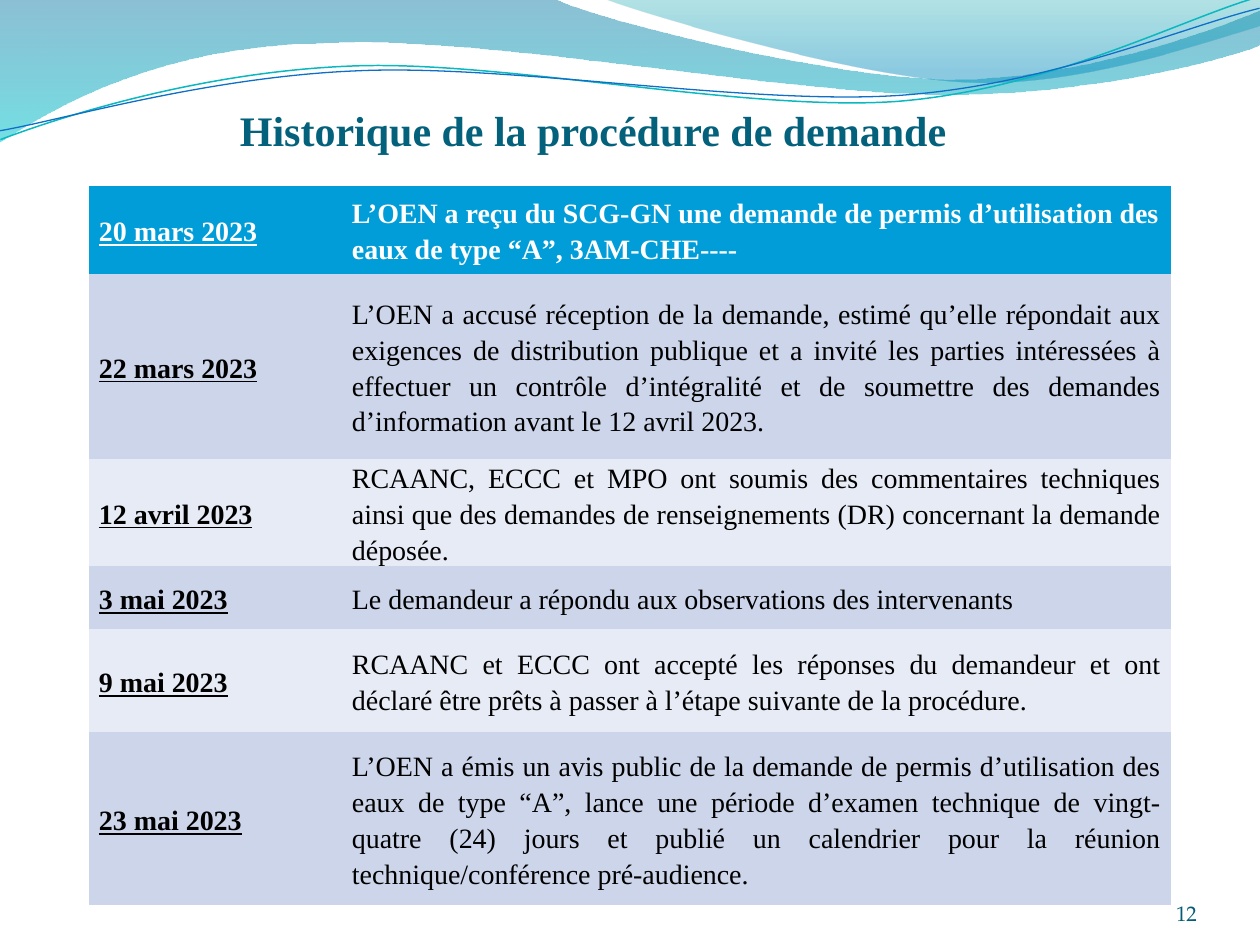
from lxml import etree
from pptx import Presentation
from pptx import util as u
from pptx.dml.color import RGBColor
from pptx.enum import text as t
from pptx.oxml.ns import qn

PX = 914400 / 126
SERIF = "Times New Roman"
PLAIN_TABLE = "{2D5ABB26-0587-4C30-8999-92F81FD0307C}"
CURVE_TILT = 357.3

BROAD_WAVE = [
    (0, 0), (554, -1), (600, 21, 837, 79, 955, 79), (1075, 79, 1207, 33, 1260, 11),
    (1261, 45), (1239, 55, 1096, 96, 940, 94), (784, 94, 481, 35, 324, 43),
    (163, 45, 58, 105, -1, 142), (0, 0),
]
CORNER_WAVE = [
    (604, -1), (641, 14, 859, 78, 969, 82), (1079, 87, 1211, 40, 1260, 26),
    (1260, 0), (604, -1),
]
TEAL_CURVE = [
    (-2, 110), (59, 90, 200, 52, 350, 53), (499, 53, 745, 118, 896, 114),
    (1049, 109, 1184, 45, 1260, 27),
]
BLUE_CURVE = [
    (-2, 101), (57, 94, 207, 57, 357, 58), (509, 58, 750, 112, 902, 108),
    (1052, 104, 1188, 52, 1262, 38),
]
COLUMN_WIDTHS = [253, 829]
HISTORY = [
    (88, "20 mars 2023",
     "L’OEN a reçu du SCG-GN une demande de permis d’utilisation des eaux "
     "de type “A”, 3AM-CHE----"),
    (185, "22 mars 2023",
     "L’OEN a accusé réception de la demande, estimé qu’elle répondait aux exigences "
     "de distribution publique et a invité les parties intéressées à effectuer un "
     "contrôle d’intégralité et de soumettre des demandes d’information avant le "
     "12 avril 2023."),
    (103, "12 avril 2023",
     "RCAANC, ECCC et MPO ont soumis des commentaires techniques ainsi que des "
     "demandes de renseignements (DR) concernant la demande déposée."),
    (63, "3 mai 2023", "Le demandeur a répondu aux observations des intervenants"),
    (103, "9 mai 2023",
     "RCAANC et ECCC ont accepté les réponses du demandeur et ont déclaré être prêts "
     "à passer à l’étape suivante de la procédure."),
    (173, "23 mai 2023",
     "L’OEN a émis un avis public de la demande de permis d’utilisation des eaux de "
     "type “A”, lance une période d’examen technique de vingt-quatre (24) jours et "
     "publié un calendrier pour la réunion technique/conférence pré-audience."),
]


def px(length):
    return u.Emu(round(length * PX))


def color(value):
    return RGBColor.from_string(value)


def bend(shape, segments):
    steps = iter(list(shape._element.iter(qn("a:lnTo"))))
    for segment in segments:
        step = next(steps)
        if len(segment) == 2:
            continue
        step.addprevious(etree.Element(qn("a:cubicBezTo")))
        curve = step.getprevious()
        for corner in (step, next(steps), next(steps)):
            curve.append(corner[0])
            corner.getparent().remove(corner)


def add_outline(shapes, segments, close):
    points = [(px(segment[i]), px(segment[i + 1]))
              for segment in segments for i in range(0, len(segment), 2)]
    builder = shapes.build_freeform(*points[0])
    builder.add_line_segments(points[1:], close=close)
    shape = builder.convert_to_shape()
    bend(shape, segments[1:])
    shape.shadow.inherit = False
    return shape


def add_wave(slide, segments, stops):
    wave = add_outline(slide.shapes, segments, True)
    wave.line.fill.background()
    wave.fill.gradient()
    wave.fill.gradient_angle = 270
    for stop, (position, value, opacity) in zip(wave.fill.gradient_stops, stops):
        stop.position = position
        stop.color.rgb = color(value)
    tints = wave._element.spPr.iter(qn("a:srgbClr"))
    for tint, (position, value, opacity) in zip(tints, stops):
        etree.SubElement(tint, qn("a:alpha"), val=str(opacity * 1000))


def add_curve(group, segments, value, width):
    curve = add_outline(group.shapes, segments, False)
    curve.rotation = CURVE_TILT
    curve.fill.background()
    curve.line.color.rgb = color(value)
    curve.line.width = u.Pt(width)


def write(frame, wording, size, name, value, align, bold=False, underline=False):
    para = frame.paragraphs[0]
    para.text = wording
    para.alignment = align
    font = para.font
    font.size, font.name, font.bold, font.underline = u.Pt(size), name, bold, underline
    font.color.rgb = color(value)
    return para


def set_frame(box, left, top, width, height, inset_top=0):
    box.left, box.top, box.width, box.height = map(px, (left, top, width, height))
    frame = box.text_frame
    frame.word_wrap = True
    frame.auto_size = t.MSO_AUTO_SIZE.NONE
    frame.vertical_anchor = t.MSO_ANCHOR.BOTTOM
    frame.margin_left = frame.margin_right = frame.margin_bottom = 0
    frame.margin_top = px(inset_top)
    return frame


def add_title(slide):
    title = slide.shapes.title
    slide.shapes._spTree.append(title._element)
    frame = set_frame(title, 0, 45, 1197, 110, 6)
    write(frame, "Historique de la procédure de demande ", 24, SERIF, "04617B",
          t.PP_ALIGN.CENTER, bold=True)


def add_page_number(slide):
    box = slide.shapes.add_textbox(0, 0, 0, 0)
    frame = set_frame(box, 1092, 876, 105, 50)
    write(frame, "12", 12, "TeX Gyre Pagella", "045D75", t.PP_ALIGN.RIGHT)


def fill_cell(cell, wording, fill, value, align, bold, underline):
    cell.fill.solid()
    cell.fill.fore_color.rgb = color(fill)
    cell.vertical_anchor = t.MSO_ANCHOR.MIDDLE
    cell.margin_left = cell.margin_right = px(10)
    cell.margin_top = cell.margin_bottom = 0
    para = write(cell.text_frame, wording, 16, SERIF, value, align, bold, underline)
    para.line_spacing = 1.15
    para.space_after = u.Pt(10)


def add_history(slide):
    height = sum(row[0] for row in HISTORY)
    frame = slide.shapes.add_table(len(HISTORY), len(COLUMN_WIDTHS), px(89), px(186),
                                   px(sum(COLUMN_WIDTHS)), px(height))
    table = frame.table
    table._tbl.tblPr.find(qn("a:tableStyleId")).text = PLAIN_TABLE
    for column, width in zip(table.columns, COLUMN_WIDTHS):
        column.width = px(width)
    for index, (row_height, date, event) in enumerate(HISTORY):
        table.rows[index].height = px(row_height)
        header = index == 0
        fill = "009DD9" if header else ("E7EBF5", "CCD5EA")[index % 2]
        value = "FFFFFF" if header else "000000"
        align = t.PP_ALIGN.LEFT if header else t.PP_ALIGN.JUSTIFY
        fill_cell(table.cell(index, 0), date, fill, value, t.PP_ALIGN.LEFT, True, True)
        fill_cell(table.cell(index, 1), event, fill, value, align, header, False)


def main():
    deck = Presentation()
    deck.slide_width, deck.slide_height = px(1260), px(945)
    slide = deck.slides.add_slide(deck.slide_layouts[5])
    add_wave(slide, BROAD_WAVE, [(0, "0074A1", 45), (1, "00C6CF", 55)])
    add_wave(slide, CORNER_WAVE, [(0, "00A1A9", 30), (0.8, "008BBF", 45)])
    curves = slide.shapes.add_group_shape()
    add_curve(curves, TEAL_CURVE, "0AB8BF", 0.85)
    add_curve(curves, BLUE_CURVE, "0F6FC6", 0.75)
    add_title(slide)
    add_page_number(slide)
    add_history(slide)
    deck.save("out.pptx")


if __name__ == "__main__":
    main()
